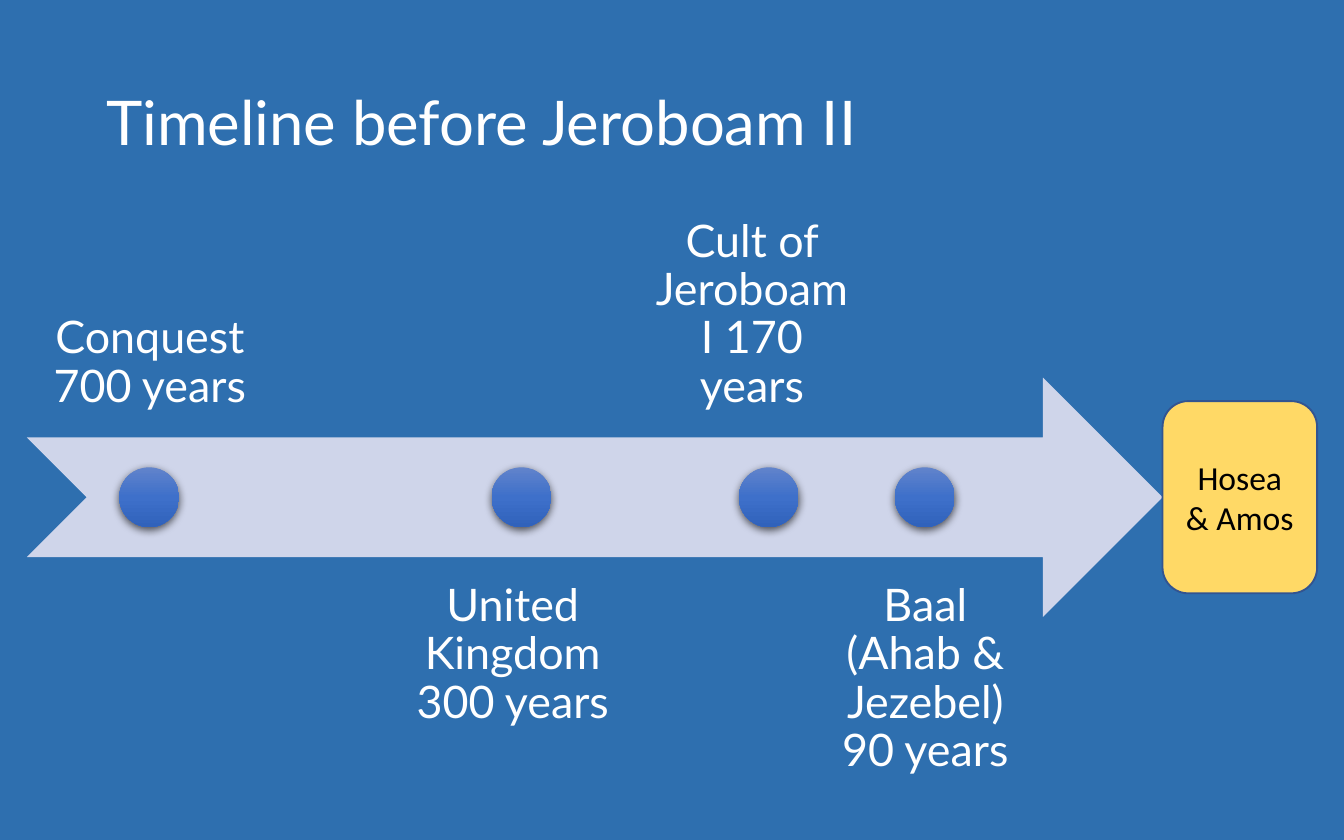
from lxml.etree import SubElement
from pptx import Presentation
from pptx.dml.color import RGBColor
from pptx.enum.shapes import MSO_SHAPE as Kind
from pptx.enum.text import MSO_ANCHOR as Anchor, PP_ALIGN as Align
from pptx.oxml import parse_xml
from pptx.oxml.ns import nsdecls, qn
from pptx.util import Inches, Pt

HEX = {"back": "2E6FAF", "text": "FFFFFF", "arrow": "CFD5EA", "box": "FFD966",
       "edge": "325491", "ink": "000000"}
SHADE = [(0, "6183CB"), (50, "3E70CA"), (100, "3062BB")]
TITLE = "Timeline before Jeroboam II"
GOAL = "Hosea & Amos"
EVENTS = [
    ("Conquest 700 years", 0.02, 0.111),
    ("United Kingdom 300 years", 0.29, 0.388),
    ("Cult of Jeroboam I 170 years", 0.468, 0.572),
    ("Baal (Ahab & Jezebel) 90 years", 0.597, 0.688),
]

WIDE, HIGH = Inches(10), Inches(6.25)
LEFT, SPAN = 0.02 * WIDE, 0.845 * WIDE
MID, RISE = 0.592 * HIGH, 0.285 * HIGH
SHAFT, DOT = RISE / 2, RISE / 4
LABEL = 0.183 * WIDE
PAD = Inches(0.19)


def tint(name):
    return RGBColor.from_string(HEX[name])


def write(shape, text, size, font, color, align, anchor, space=None):
    frame = shape.text_frame
    frame.text = text
    frame.word_wrap = True
    frame.vertical_anchor = anchor
    para = frame.paragraphs[0]
    para.alignment = align
    para.line_spacing = space
    face = para.runs[0].font
    face.size, face.name = Pt(size), font
    face.color.rgb = tint(color)


def add_form(shapes, kind, x, y, w, h, fill=None):
    shape = shapes.add_shape(kind, *map(int, (x, y, w, h)))
    shape.shadow.inherit = False
    shape.line.fill.background()
    if fill:
        shape.fill.solid()
        shape.fill.fore_color.rgb = tint(fill)
    return shape


def add_dot(shapes, x):
    dot = add_form(shapes, Kind.OVAL, x - DOT / 2, MID - DOT / 2, DOT, DOT)
    dot.fill.gradient()
    dot.fill.gradient_angle = 270
    props = dot.element.spPr
    stops = props.find(".//" + qn("a:gsLst"))
    stops.clear()
    for pos, color in SHADE:
        stop = SubElement(stops, qn("a:gs"), pos=str(pos * 1000))
        SubElement(stop, qn("a:srgbClr"), val=color)
    props.find(qn("a:effectLst")).append(parse_xml(
        f'<a:outerShdw {nsdecls("a")} blurRad="{Pt(4.5)}" dist="{Pt(1.5)}" '
        'dir="5400000" algn="ctr" rotWithShape="0"><a:srgbClr val="000000">'
        '<a:alpha val="63000"/></a:srgbClr></a:outerShdw>'))


def add_label(shapes, text, x, above):
    y = MID - SHAFT / 2 - RISE if above else MID + SHAFT / 2
    label = shapes.add_textbox(*map(int, (x, y, LABEL, RISE)))
    frame = label.text_frame
    frame.margin_left = frame.margin_right = PAD
    frame.margin_top = frame.margin_bottom = PAD
    anchor = Anchor.BOTTOM if above else Anchor.TOP
    write(label, text, 24, "Lato", "text", Align.CENTER, anchor, 0.9)


def main():
    deck = Presentation()
    deck.slide_width, deck.slide_height = WIDE, HIGH
    slide = deck.slides.add_slide(deck.slide_layouts[5])
    slide.background.fill.solid()
    slide.background.fill.fore_color.rgb = tint("back")

    title = slide.shapes.title
    title.left, title.top = Inches(0.69), Inches(0.33)
    title.width, title.height = Inches(8.62), Inches(1.21)
    write(title, TITLE, 33, "Lato", "text", Align.LEFT, Anchor.MIDDLE, 0.9)

    line = slide.shapes.add_group_shape().shapes
    add_form(line, Kind.NOTCHED_RIGHT_ARROW, LEFT, MID - RISE / 2, SPAN, RISE, "arrow")
    for i, (text, x, spot) in enumerate(EVENTS):
        add_label(line, text, x * WIDE, i % 2 == 0)
        add_dot(line, spot * WIDE)

    tall = Inches(1.43)
    goal = add_form(slide.shapes, Kind.ROUNDED_RECTANGLE, LEFT + SPAN, MID - tall / 2,
                    WIDE - 2 * LEFT - SPAN, tall, "box")
    goal.line.color.rgb = tint("edge")
    goal.line.width = Pt(1)
    write(goal, GOAL, 18, "Calibri", "ink", Align.CENTER, Anchor.MIDDLE)

    deck.save("out.pptx")


if __name__ == "__main__":
    main()
